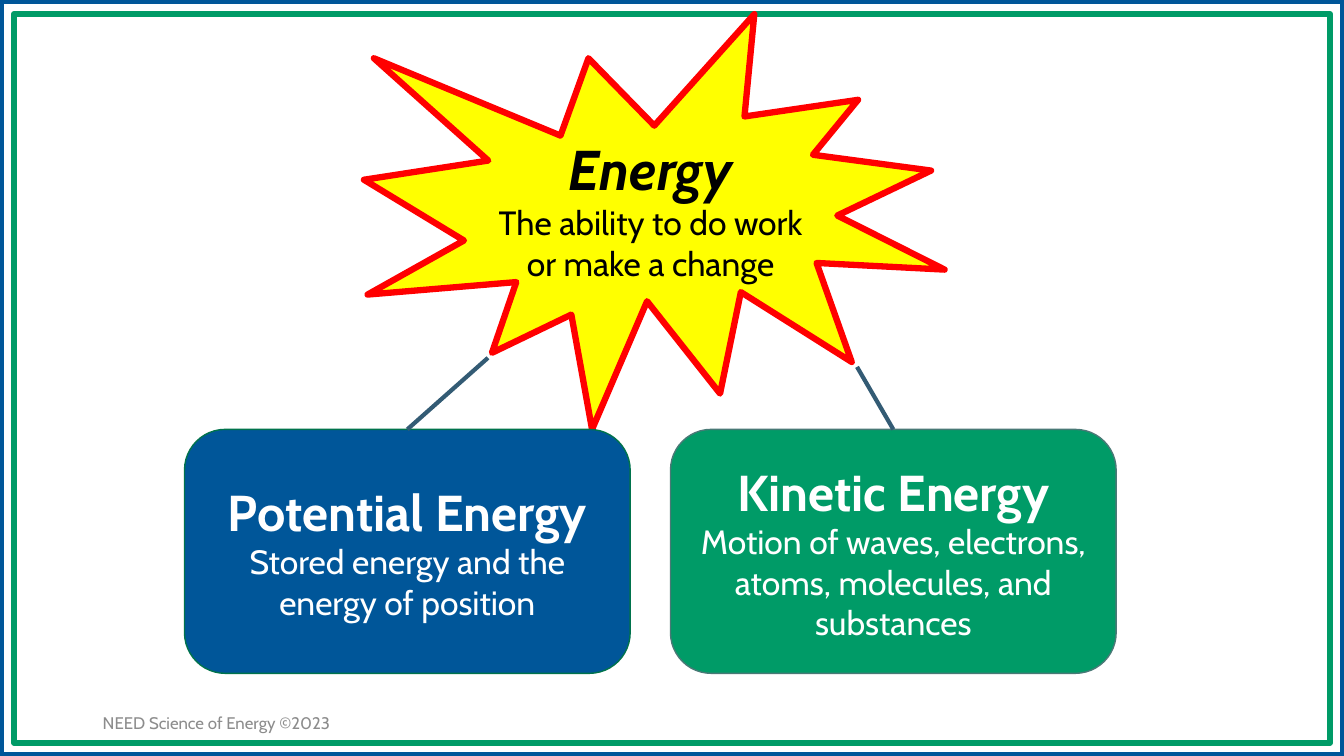
from pptx import Presentation
from pptx.dml.color import RGBColor
from pptx.enum.shapes import MSO_CONNECTOR, MSO_SHAPE
from pptx.enum.text import MSO_ANCHOR, PP_ALIGN
from pptx.oxml.ns import qn
from pptx.util import Inches, Pt
from lxml import etree


def add_box(shape, x, y, w, h, line, width, fill=None):
    sp = s.shapes.add_shape(shape, Inches(x), Inches(y), Inches(w), Inches(h))
    sp.shadow.inherit = False
    sp.line.color.rgb = RGBColor.from_string(line)
    sp.line.width = Pt(width)
    if fill:
        sp.fill.solid()
        sp.fill.fore_color.rgb = RGBColor.from_string(fill)
    else:
        sp.fill.background()
    return sp


def add_text(sp, text, size, color, bold=False, italic=False, align=PP_ALIGN.CENTER):
    """Write into the first paragraph if it is empty, else append one."""
    tf = sp.text_frame
    tf.word_wrap = True
    tf.vertical_anchor = MSO_ANCHOR.MIDDLE
    p = tf.paragraphs[0] if not tf.text else tf.add_paragraph()
    p.alignment = align
    r = p.add_run()
    r.text = text
    r.font.name = "Cabin"
    r.font.size = Pt(size)
    r.font.bold = bold
    r.font.italic = italic
    r.font.color.rgb = RGBColor.from_string(color)


BLUE, GREEN = "005699", "009B67"

prs = Presentation()
prs.slide_width, prs.slide_height = Inches(13.33), Inches(7.5)
s = prs.slides.add_slide(prs.slide_layouts[6])

# Page frame and footer
add_box(MSO_SHAPE.RECTANGLE, 0, 0, 13.33, 7.5, BLUE, 6)
add_box(MSO_SHAPE.RECTANGLE, 0.14, 0.14, 13.05, 7.23, GREEN, 4.5)
footer = s.shapes.add_textbox(Inches(0.92), Inches(6.97), Inches(6.79), Inches(0.4))
add_text(footer, "NEED Science of Energy ©2023", 12, "8C8C8C", align=PP_ALIGN.LEFT)

# Central idea
burst = add_box(MSO_SHAPE.EXPLOSION1, 3.61, 0.14, 5.76, 4.12, "FF0000", 4.5, "FFFF00")
add_text(burst, "Energy", 40, "000000", bold=True, italic=True)
add_text(burst, "The ability to do work or make a change", 24, "000000")

# The two kinds of energy, each joined to the burst
CARD_Y, CARD_W, CARD_H = 4.26, 4.42, 2.42
kinds = [
    (1.83, BLUE, "00734C", (4.84, 3.55), "Potential Energy",
     "Stored energy and the energy of position"),
    (6.65, GREEN, "497976", (8.5, 3.64), "Kinetic Energy",
     "Motion of waves, electrons, atoms, molecules, and substances"),
]
for x, fill, line, (start_x, start_y), title, meaning in kinds:
    card = add_box(MSO_SHAPE.ROUNDED_RECTANGLE, x, CARD_Y, CARD_W, CARD_H, line, 1, fill)
    add_text(card, title, 36, "FFFFFF", bold=True)
    add_text(card, meaning, 24, "FFFFFF")

    link = s.shapes.add_connector(MSO_CONNECTOR.STRAIGHT, Inches(start_x), Inches(start_y),
                                  Inches(x + CARD_W / 2), Inches(CARD_Y))
    link.line.color.rgb = RGBColor.from_string("335B74")
    link.line.width = Pt(3)
    etree.SubElement(link._element.spPr, qn("a:effectLst"))

prs.save("out.pptx")
